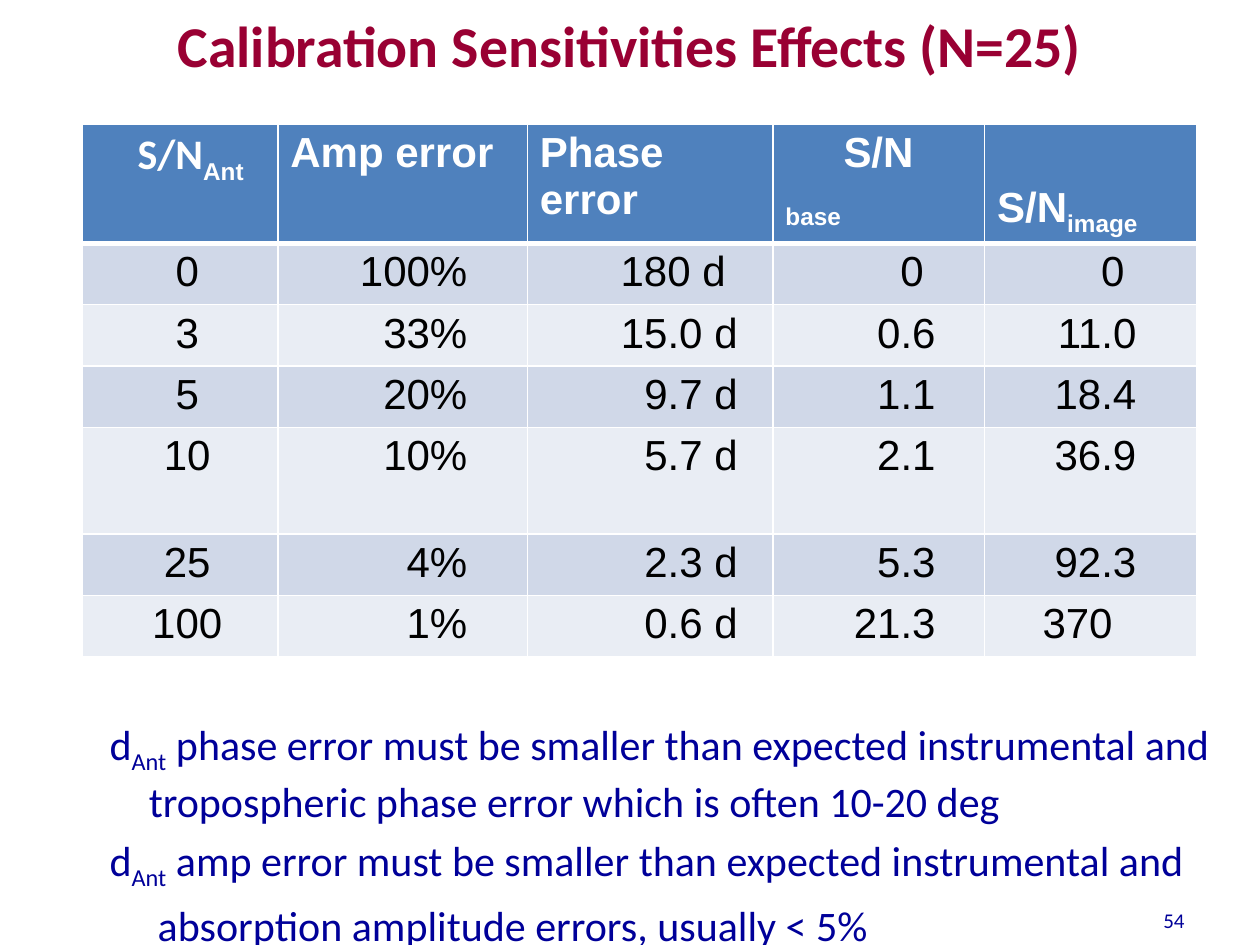
"""Build the slide on calibration sensitivities with its table and notes."""
from typing import Any, NamedTuple

import pptx
import pptx.dml.color
import pptx.enum.text
import pptx.oxml.ns
import pptx.util
from lxml import etree

Cm = pptx.util.Cm
ALIGN = pptx.enum.text.PP_ALIGN
ANCHOR = pptx.enum.text.MSO_ANCHOR

COLORS = {
    "title": "990033",
    "note": "000099",
    "header": "4F81BD",
    "band_dark": "D0D8E8",
    "band_light": "E9EDF4",
    "white": "FFFFFF",
    "black": "000000",
}


class Style(NamedTuple):
    size: float
    font: str
    color: str
    bold: bool = False


class Piece(NamedTuple):
    text: str
    sub: bool = False
    font: str = ""


class Column(NamedTuple):
    width: float
    header: list[Piece]
    values: list[str]
    header_indent: float = 0
    header_anchor: Any = ANCHOR.TOP
    align: Any = ALIGN.RIGHT
    left: float = 0.25
    right: float = 0.25


class Note(NamedTuple):
    pieces: list[Piece]
    left: float
    indent: float


TITLE = Style(33, "Calibri", "title", True)
HEADER = Style(24, "Arial", "white", True)
VALUE = Style(24, "Arial", "black")
NOTE = Style(24, "Calibri", "note")
NUMBER = Style(12, "Calibri", "note")

COLUMNS = [
    Column(3.95, [Piece("S/N", font="Calibri"), Piece("Ant", True)],
           ["0", "3", "5", "10", "25", "100"],
           header_indent=0.87, align=ALIGN.CENTER, left=0.55),
    Column(5.03, [Piece("Amp error")],
           ["100%", "33%", "20%", "10%", "4%", "1%"], right=1.21),
    Column(4.95, [Piece("Phase error")],
           ["180 d", "15.0 d", "9.7 d", "5.7 d", "2.3 d", "0.6 d"], right=0.71),
    Column(4.27, [Piece("S/N\v"), Piece("base", True)],
           ["0", "0.6", "1.1", "2.1", "5.3", "21.3"], header_indent=1.17, right=0.99),
    Column(4.27, [Piece("S/N"), Piece("image", True)],
           ["0", "11.0", "18.4", "36.9", "92.3", "370"],
           header_anchor=ANCHOR.BOTTOM, right=1.21),
]
ROW_HEIGHTS = [2.26, 1.19, 1.19, 1.19, 2.15, 1.19, 1.19]
NUDGES = {(1, 2): 0.24, (1, 3): 0.24, (1, 4): 0.24, (6, 4): 0.48}

NOTES = [
    Note([Piece("d"), Piece("Ant", True),
          Piece(" phase error must be smaller than expected instrumental and "
                "tropospheric phase error which is often 10-20 deg")], 2.06, -0.79),
    Note([Piece("d"), Piece("Ant", True),
          Piece(" amp error must be smaller than expected instrumental and")], 2.06, -0.79),
    Note([Piece("absorption amplitude errors, usually < 5%")], 2.24, 0),
]


def rgb(name: str) -> pptx.dml.color.RGBColor:
    """Return the named colour."""
    return pptx.dml.color.RGBColor.from_string(COLORS[name])


def add_runs(p: Any, pieces: list[Piece], style: Style) -> None:
    """Add the pieces to a paragraph, breaking the line at each vertical tab."""
    for piece in pieces:
        r = p.add_run()
        r.text = piece.text.rstrip("\v")
        r.font.size = pptx.util.Pt(style.size)
        r.font.name = piece.font or style.font
        r.font.bold = style.bold
        r.font.color.rgb = rgb(style.color)
        if piece.sub:
            r.font._element.set("baseline", "-25000")
        if piece.text.endswith("\v"):
            p.add_line_break()


def set_indent(p: Any, left: float, indent: float) -> None:
    """Set the left margin and first-line indent of a paragraph."""
    pPr = p._p.get_or_add_pPr()
    pPr.set("marL", str(Cm(left)))
    pPr.set("indent", str(Cm(indent)))


def add_box(s: Any, left: float, top: float, width: float, height: float) -> Any:
    """Add a wrapping text box and return its text frame."""
    tf = s.shapes.add_textbox(Cm(left), Cm(top), Cm(width), Cm(height)).text_frame
    tf.word_wrap = True
    return tf


def add_borders(cell: Any, widths: dict[str, float]) -> None:
    """Draw white borders of the given widths in points."""
    qn = pptx.oxml.ns.qn
    tcPr = cell._tc.get_or_add_tcPr()
    for side, width in widths.items():
        ln = etree.SubElement(tcPr, qn(f"a:ln{side}"), w=str(pptx.util.Pt(width)))
        fill = etree.SubElement(ln, qn("a:solidFill"))
        etree.SubElement(fill, qn("a:srgbClr"), val=COLORS["white"])


def fill_cell(cell: Any, row: int, col: int, column: Column) -> None:
    """Format one table cell and write its text."""
    bottom = 1 if row else 3
    top = 3 if row == 1 else 1
    add_borders(cell, {"L": 1, "R": 1, "T": top, "B": bottom})
    band = "band_dark" if row % 2 else "band_light"
    cell.fill.solid()
    cell.fill.fore_color.rgb = rgb(band if row else "header")
    cell.margin_top = cell.margin_bottom = Cm(0.11)
    p = cell.text_frame.paragraphs[0]
    if row == 0:
        cell.vertical_anchor = column.header_anchor
        set_indent(p, 0, column.header_indent)
        add_runs(p, column.header, HEADER)
        return
    cell.margin_left = Cm(column.left)
    cell.margin_right = Cm(column.right + NUDGES.get((row, col), 0))
    p.alignment = column.align
    add_runs(p, [Piece(column.values[row - 1])], VALUE)


def add_error_table(s: Any) -> None:
    """Add the table of errors by signal to noise."""
    width = sum(column.width for column in COLUMNS)
    table = s.shapes.add_table(len(ROW_HEIGHTS), len(COLUMNS), Cm(1.65), Cm(2.51),
                               Cm(width), Cm(sum(ROW_HEIGHTS))).table
    for row, height in enumerate(ROW_HEIGHTS):
        table.rows[row].height = Cm(height)
    for col, column in enumerate(COLUMNS):
        table.columns[col].width = Cm(column.width)
        for row in range(len(ROW_HEIGHTS)):
            fill_cell(table.cell(row, col), row, col, column)


def add_notes(s: Any) -> None:
    """Add the notes below the table."""
    tf = add_box(s, 0.69, 14.35, 24.03, 4.7)
    for i, note in enumerate(NOTES):
        p = tf.add_paragraph() if i else tf.paragraphs[0]
        set_indent(p, note.left, note.indent)
        if i:
            p.space_before = pptx.util.Pt(4.8)
        add_runs(p, note.pieces, NOTE)


def main() -> None:
    """Build and save the slide."""
    prs = pptx.Presentation()
    prs.slide_width, prs.slide_height = Cm(25.4), Cm(19.05)
    s = prs.slides.add_slide(prs.slide_layouts[6])
    p = add_box(s, 1.27, 0.08, 22.86, 2.13).paragraphs[0]
    p.alignment = ALIGN.CENTER
    add_runs(p, [Piece("Calibration Sensitivities Effects (N=25)")], TITLE)
    add_error_table(s)
    add_notes(s)
    tf = add_box(s, 22.86, 18.03, 1.27, 1.02)
    tf.vertical_anchor = ANCHOR.MIDDLE
    tf.paragraphs[0].alignment = ALIGN.RIGHT
    add_runs(tf.paragraphs[0], [Piece("54")], NUMBER)
    prs.save("out.pptx")


if __name__ == "__main__":
    main()
